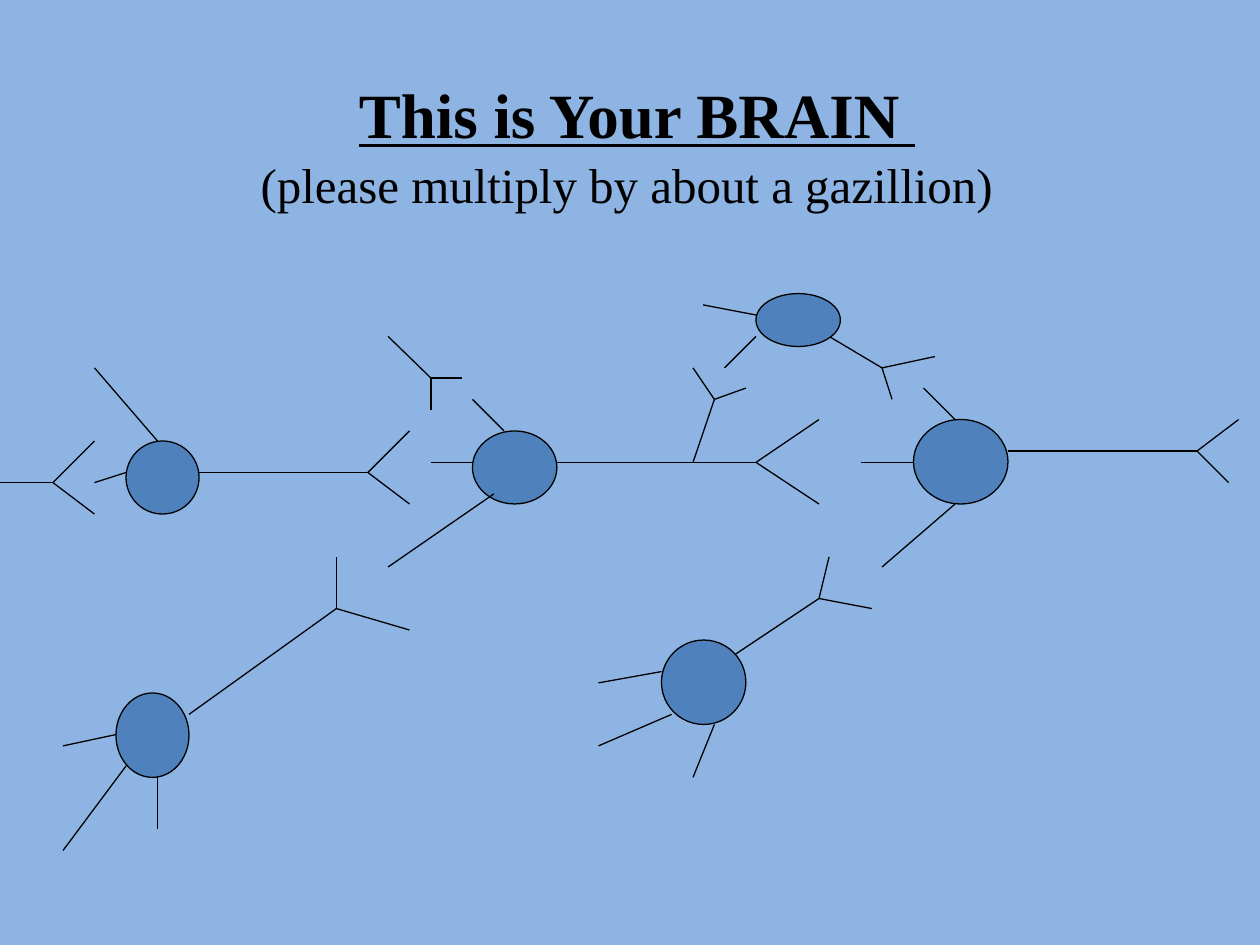
from pptx import Presentation
from pptx.dml.color import RGBColor
from pptx.enum.shapes import MSO_CONNECTOR, MSO_SHAPE
from pptx.enum.text import PP_ALIGN
from pptx.oxml.ns import qn
from pptx.util import Inches, Pt
from lxml import etree

STRAIGHT = MSO_CONNECTOR.STRAIGHT
OVAL = MSO_SHAPE.OVAL
LEFT = PP_ALIGN.LEFT

# Each axon: start, branching point, tips
AXONS = [
    ((1.58, 3.75), (2.92, 3.75), [(3.25, 3.42), (3.25, 4)]),
    ((4.42, 3.67), (6, 3.67), [(6.5, 3.33), (6.5, 4)]),
    ((8, 3.58), (9.5, 3.58), [(9.83, 3.33), (9.75, 3.83)]),
    ((0, 3.83), (0.42, 3.83), [(0.75, 3.5), (0.75, 4.08)]),
    ((1.5, 5.67), (2.67, 4.83), [(2.67, 4.42), (3.25, 5)]),
    ((3.08, 2.67), (3.42, 3), [(3.42, 3.25), (3.67, 3)]),
    ((5.75, 5.25), (6.5, 4.75), [(6.58, 4.42), (6.92, 4.83)]),
    ((6.58, 2.67), (7, 2.92), [(7.08, 3.17), (7.42, 2.83)]),
    ((5.5, 3.67), (5.67, 3.17), [(5.5, 2.92), (5.92, 3.08)]),
]

# Each cell: left, top, width, height, then its dendrites as (root, tip)
CELLS = [
    ((1, 3.5, 0.58, 0.58),
     [((1, 3.75), (0.75, 3.83)), ((1.25, 3.5), (0.75, 2.92))]),
    ((3.75, 3.42, 0.67, 0.58),
     [((3.75, 3.67), (3.42, 3.67)), ((3.92, 3.92), (3.08, 4.5)),
      ((4, 3.42), (3.75, 3.17))]),
    ((7.25, 3.33, 0.75, 0.67),
     [((7.58, 4), (7, 4.5)), ((7.58, 3.33), (7.33, 3.08)),
      ((7.25, 3.67), (6.83, 3.67))]),
    ((0.92, 5.5, 0.58, 0.67),
     [((0.92, 5.83), (0.5, 5.92)), ((1, 6.08), (0.5, 6.75)),
      ((1.25, 6.17), (1.25, 6.58))]),
    ((5.25, 5.08, 0.67, 0.67),
     [((5.25, 5.33), (4.75, 5.42)), ((5.33, 5.67), (4.75, 5.92)),
      ((5.67, 5.75), (5.5, 6.17))]),
    ((6, 2.33, 0.67, 0.42),
     [((6, 2.67), (5.75, 2.92)), ((6, 2.5), (5.58, 2.42))]),
]


def rgb(value):
    return RGBColor.from_string(value)


class Sketch:
    """Style and drawing methods for one slide."""
    background = "8EB4E3"
    cell_fill = "4F81BD"
    ink = "000000"
    line_width = Pt(0.75)
    font = "Times New Roman"

    def __init__(self, slide):
        self.slide = slide
        fill = slide.background.fill
        fill.solid()
        fill.fore_color.rgb = rgb(self.background)

    def outline(self, line):
        line.color.rgb = rgb(self.ink)
        line.width = self.line_width

    def line(self, start, end):
        c = self.slide.shapes.add_connector(
            STRAIGHT, *[Inches(v) for v in (*start, *end)])
        self.outline(c.line)
        etree.SubElement(c._element.spPr, qn("a:effectLst"))

    def axon(self, start, node, tips):
        self.line(start, node)
        for tip in tips:
            self.line(node, tip)

    def cell(self, box, dendrites):
        sp = self.slide.shapes.add_shape(OVAL, *[Inches(v) for v in box])
        sp.shadow.inherit = False
        sp.fill.solid()
        sp.fill.fore_color.rgb = rgb(self.cell_fill)
        self.outline(sp.line)
        for root, tip in dendrites:
            self.line(root, tip)

    def text_box(self, box):
        tf = self.slide.shapes.add_textbox(*[Inches(v) for v in box]).text_frame
        tf.word_wrap = True
        tf.margin_top = Inches(0.1)
        return tf

    def paragraph(self, p, text, size, indent, emphasis=False):
        p.alignment = LEFT
        p._p.get_or_add_pPr().set("marL", str(Inches(indent)))
        r = p.add_run()
        r.text = text
        r.font.name = self.font
        r.font.size = Pt(size)
        r.font.bold = r.font.underline = emphasis
        r.font.color.rgb = rgb(self.ink)


def main():
    prs = Presentation()
    prs.slide_width, prs.slide_height = Inches(10), Inches(7.5)
    s = Sketch(prs.slides.add_slide(prs.slide_layouts[6]))

    for axon in AXONS:
        s.axon(*axon)
    for cell in CELLS:
        s.cell(*cell)

    tf = s.text_box((1, 0.5, 8.5, 1.18))
    s.paragraph(tf.paragraphs[0], "This is Your BRAIN ", 36, 1.75, emphasis=True)
    p = tf.add_paragraph()
    p.space_before = Pt(2)
    s.paragraph(p, "(please multiply by about a gazillion)", 28, 0.97)

    prs.save("out.pptx")


if __name__ == "__main__":
    main()
